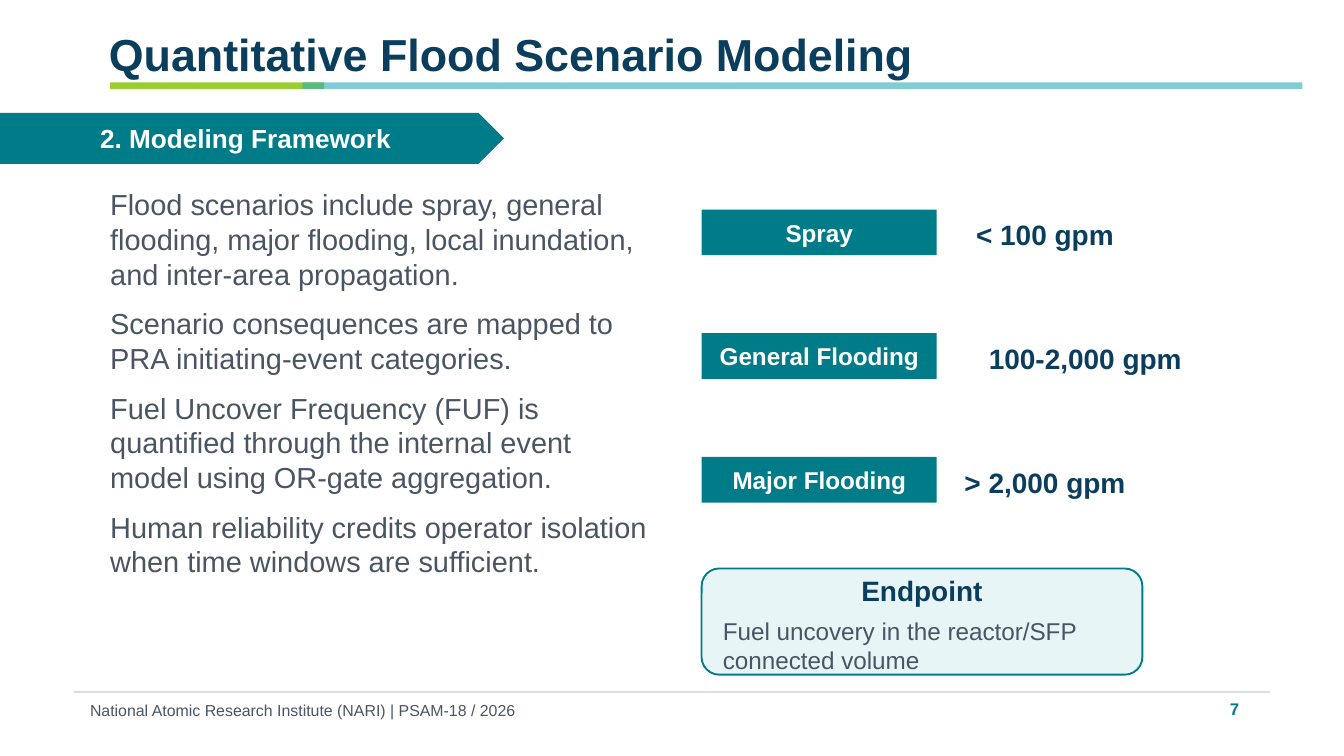
import pptx
import pptx.util
import pptx.dml.color
import pptx.enum.shapes
import pptx.enum.text
import pptx.oxml.ns
import lxml.etree

Pt = pptx.util.Pt
SHAPE = pptx.enum.shapes.MSO_SHAPE
ALIGN = pptx.enum.text.PP_ALIGN
ANCHOR = pptx.enum.text.MSO_ANCHOR

# Content
TITLE = "Quantitative Flood Scenario Modeling"
SECTION = "2. Modeling Framework"
BODY = [
    "Flood scenarios include spray, general flooding, major flooding, "
    "local inundation, and inter-area propagation.",
    "Scenario consequences are mapped to PRA initiating-event categories.",
    "Fuel Uncover Frequency (FUF) is quantified through the internal event "
    "model using OR-gate aggregation.",
    "Human reliability credits operator isolation when time windows are sufficient.",
]
# Flood class, flow rate, width and height of the rate box
CLASSES = [
    ("Spray", "< 100 gpm", 104.4, 18),
    ("General Flooding", "100-2,000 gpm", 147.6, 20.9),
    ("Major Flooding", "> 2,000 gpm", 104.4, 18),
]
ENDPOINT = ("Endpoint", "Fuel uncovery in the reactor/SFP connected volume")
FOOTER = "National Atomic Research Institute (NARI) | PSAM-18 / 2026"
PAGE = "7"

NAVY, TEAL, GREY, WHITE = "0B3D5C", "007C89", "4A5563", "FFFFFF"
SMALL_INSETS = (3.6, 1.44, 3.6, 1.44)
SHAPE_INSETS = (7.2, 3.6, 7.2, 3.6)


def rgb(value):
    return pptx.dml.color.RGBColor.from_string(value)


def add_para(tf, text, size, color, bold=False, align=ALIGN.LEFT, before=0, after=0):
    first = tf.paragraphs[0]
    p = tf.add_paragraph() if first.runs else first
    p.alignment = align
    p.space_before, p.space_after = Pt(before), Pt(after)
    r = p.add_run()
    r.text = text
    r.font.name, r.font.size, r.font.bold = "Arial", Pt(size), bold
    r.font.color.rgb = rgb(color)


def set_frame(tf, insets, anchor):
    tf.word_wrap = True
    tf.vertical_anchor = anchor
    tf.margin_left, tf.margin_top, tf.margin_right, tf.margin_bottom = map(Pt, insets)
    return tf


def add_box(x, y, w, h, insets=SMALL_INSETS):
    sp = s.shapes.add_textbox(Pt(x), Pt(y), Pt(w), Pt(h))
    return set_frame(sp.text_frame, insets, ANCHOR.TOP)


def add_shape(kind, x, y, w, h, fill, line=None, alpha=None, insets=SHAPE_INSETS):
    sp = s.shapes.add_shape(kind, Pt(x), Pt(y), Pt(w), Pt(h))
    sp.shadow.inherit = False
    sp.fill.solid()
    sp.fill.fore_color.rgb = rgb(fill)
    if line:
        sp.line.color.rgb = rgb(line)
        sp.line.width = Pt(1)
    else:
        sp.line.fill.background()
    if alpha:
        qn = pptx.oxml.ns.qn
        clr = sp.fill._xPr.find(qn("a:solidFill")).find(qn("a:srgbClr"))
        lxml.etree.SubElement(clr, qn("a:alpha")).set("val", str(alpha * 1000))
    return set_frame(sp.text_frame, insets, ANCHOR.MIDDLE)


prs = pptx.Presentation()
prs.slide_width, prs.slide_height = Pt(720), Pt(405)
s = prs.slides.add_slide(prs.slide_layouts[6])

# Title with its two overlapping rules
add_shape(SHAPE.RECTANGLE, 59.04, 44.1, 114.6, 3.6, "80C201", alpha=80)
add_shape(SHAPE.RECTANGLE, 162, 44.1, 535.7, 3.6, "2DADB6", alpha=60)
add_para(add_box(54.72, 12.96, 608.4, 27.36), TITLE, 24, NAVY, True)

# Section banner
tf = add_shape(SHAPE.PENTAGON, 0, 60.48, 270, 27.36, TEAL)
add_para(tf, SECTION, 14, WHITE, True, ALIGN.CENTER)

# Footer
add_shape(SHAPE.RECTANGLE, 39.6, 370.08, 640.8, 1.2, "D8DFE5")
add_para(add_box(44.64, 373.68, 475.2, 12.96), FOOTER, 8.5, GREY)
add_para(add_box(637.2, 372.96, 30.24, 15.84), PAGE, 9, TEAL, True, ALIGN.RIGHT)

# Body text
tf = add_box(53.28, 97.92, 300.96, 216.72, (5.76, 2.16, 3.6, 2.16))
for text in BODY:
    add_para(tf, text, 15.5, GREY, after=8)

# Flood classes, one row each
LEFT, TOP, PITCH = 375.84, 112.32, 66.24
for i, (name, rate, rate_w, rate_h) in enumerate(CLASSES):
    y = TOP + i * PITCH
    tf = add_shape(SHAPE.RECTANGLE, LEFT, y, 126, 24.48, TEAL)
    add_para(tf, name, 13, WHITE, True, ALIGN.CENTER)
    tf = add_box(507.6, y + 2.88, rate_w, rate_h)
    add_para(tf, rate, 15, NAVY, True, ALIGN.CENTER)

# Endpoint card
tf = add_shape(SHAPE.ROUNDED_RECTANGLE, LEFT, 304.56, 236.16, 56.88, "E8F5F7",
               line=TEAL, insets=(8.64, 5.76, 8.64, 3.6))
heading, detail = ENDPOINT
add_para(tf, heading, 15, NAVY, True, ALIGN.CENTER)
add_para(tf, detail, 13, GREY, before=5)

prs.save("out.pptx")
